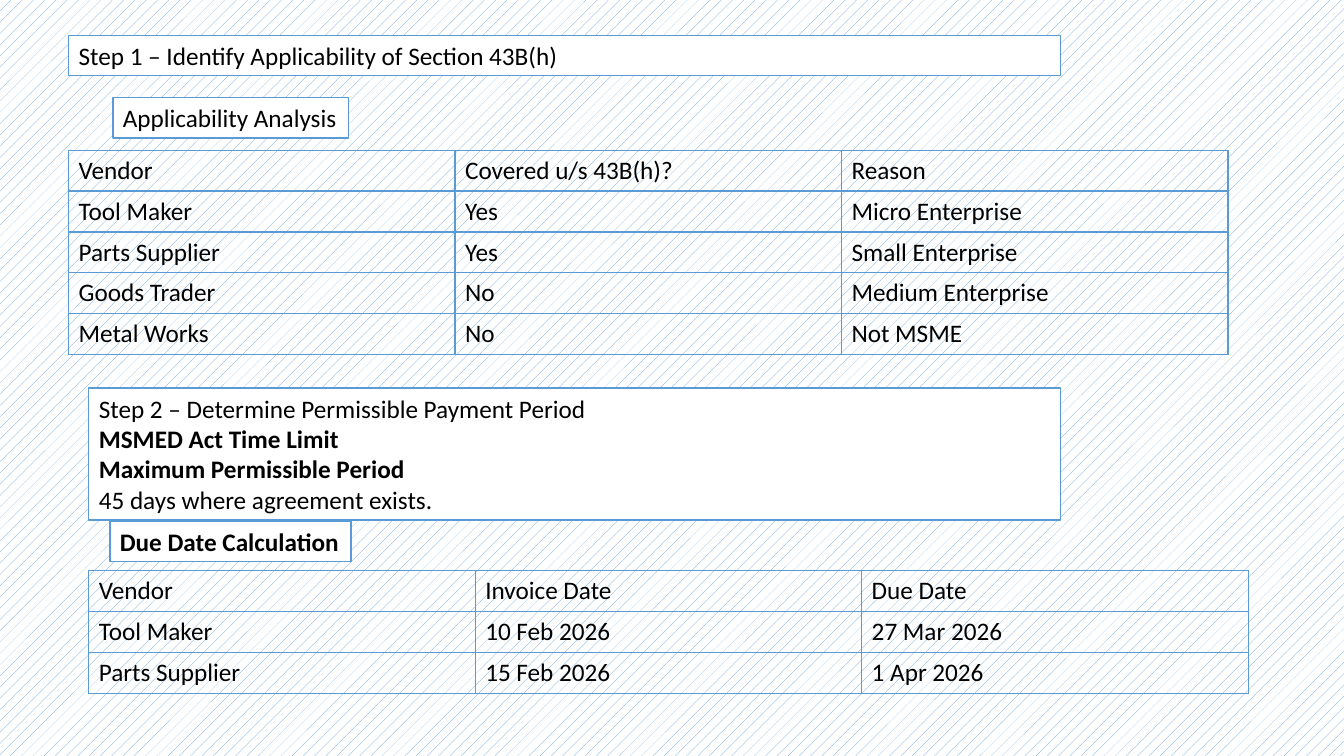
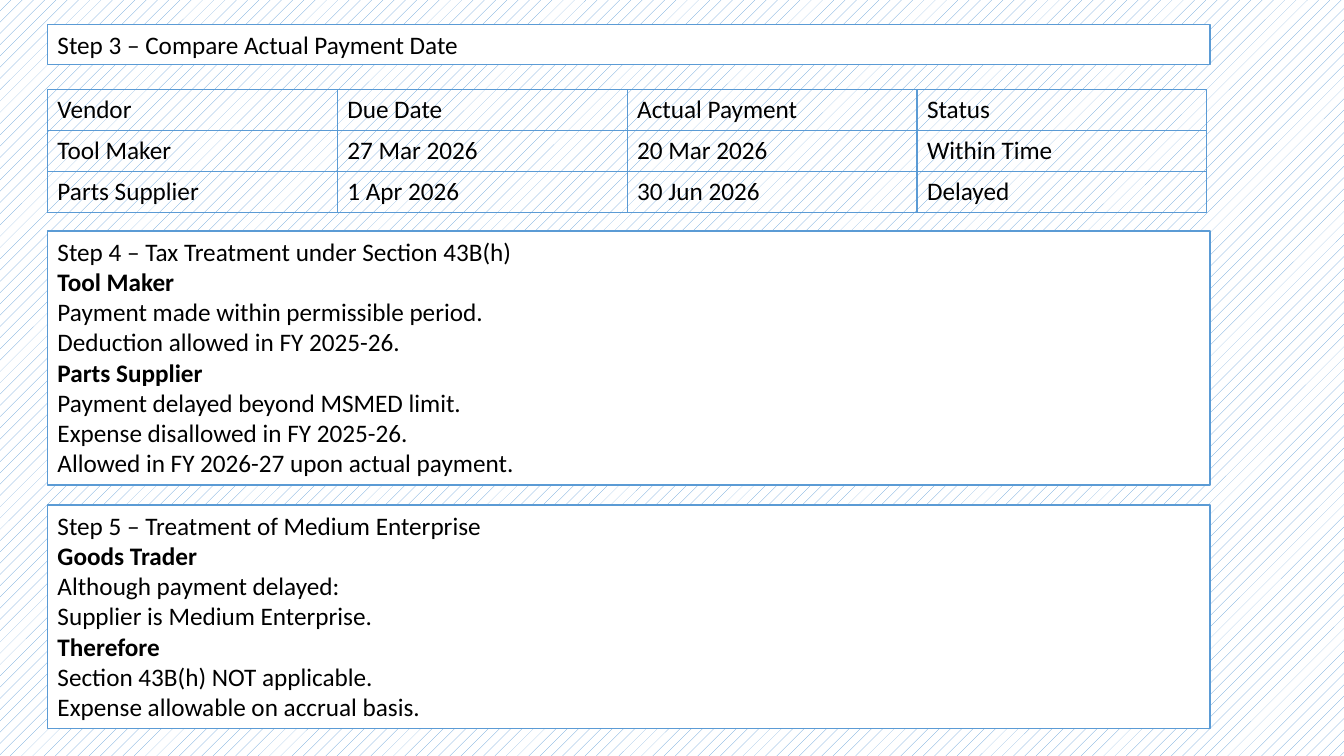
import dataclasses

import lxml.etree
import pptx
import pptx.dml.color
import pptx.enum.dml
import pptx.enum.text
import pptx.oxml.ns
import pptx.util

Inches = pptx.util.Inches

TOOLS = "Tool Maker"
PARTS = "Parts Supplier"
TRADER = "Goods Trader"
METALS = "Metal Works"


@dataclasses.dataclass(frozen=True)
class Theme:
    """Colours, type and line sizes shared by the deck."""

    accent: pptx.dml.color.RGBColor = pptx.dml.color.RGBColor(0x5B, 0x9B, 0xD5)
    paper: pptx.dml.color.RGBColor = pptx.dml.color.RGBColor(0xFF, 0xFF, 0xFF)
    ink: pptx.dml.color.RGBColor = pptx.dml.color.RGBColor(0, 0, 0)
    font: str = "Calibri"
    size: pptx.util.Pt = pptx.util.Pt(18)
    rule: pptx.util.Pt = pptx.util.Pt(1)
    row_height: pptx.util.Length = Inches(0.4)
    table_width: pptx.util.Length = Inches(11.5)


class Builder:
    """Hold the theme and the current page, and draw each kind of element."""

    def __init__(self, theme):
        self.theme = theme
        self.deck = pptx.Presentation()
        self.deck.slide_width = Inches(13.33)
        self.deck.slide_height = Inches(7.5)
        self.page = None

    def new_page(self, layout_name):
        layout = self.deck.slide_layouts.get_by_name(layout_name)
        self.page = self.deck.slides.add_slide(layout)
        fill = self.page.background.fill
        fill.patterned()
        fill.pattern = pptx.enum.dml.MSO_PATTERN.PERCENT_10
        fill.fore_color.rgb = self.theme.accent
        fill.back_color.rgb = self.theme.paper

    def style_text(self, frame, strong=()):
        for para in frame.paragraphs:
            para.alignment = pptx.enum.text.PP_ALIGN.LEFT
            para.space_before = pptx.util.Pt(0)
            for span in para.runs:
                span.font.name = self.theme.font
                span.font.size = self.theme.size
                span.font.color.rgb = self.theme.ink
                span.font.bold = span.text in strong

    def frame_box(self, box, left, top, width, height, wrap=True):
        box.left, box.top = Inches(left), Inches(top)
        box.width, box.height = Inches(width), Inches(height)
        box.fill.solid()
        box.fill.fore_color.rgb = self.theme.paper
        box.line.color.rgb = self.theme.accent
        box.line.width = self.theme.rule
        frame = box.text_frame
        frame.word_wrap = wrap
        frame.auto_size = pptx.enum.text.MSO_AUTO_SIZE.NONE
        frame.vertical_anchor = pptx.enum.text.MSO_ANCHOR.TOP

    def title(self, text, left, top, width):
        box = self.page.shapes.title
        self.frame_box(box, left, top, width, 0.4)
        box.text_frame.text = text
        self.style_text(box.text_frame)

    def steps(self, index, lines, strong, left, top, width, height):
        box = self.page.placeholders[index]
        self.frame_box(box, left, top, width, height)
        box.text_frame.text = "\n".join(lines)
        for para in box.text_frame.paragraphs:
            properties = para._p.get_or_add_pPr()
            properties.set("marL", "0")
            properties.set("indent", "0")
            lxml.etree.SubElement(properties, pptx.oxml.ns.qn("a:buNone"))
        self.style_text(box.text_frame, strong)

    def label(self, text, left, top, width, bold=False):
        box = self.page.shapes.add_textbox(0, 0, 0, 0)
        self.frame_box(box, left, top, width, 0.4, wrap=False)
        box.text_frame.text = text
        self.style_text(box.text_frame, (text,) if bold else ())

    def border_cell(self, cell):
        properties = cell._tc.get_or_add_tcPr()
        for position, side in enumerate(("lnL", "lnR", "lnT", "lnB")):
            edge = lxml.etree.Element(pptx.oxml.ns.qn(f"a:{side}"), w=str(self.theme.rule))
            paint = lxml.etree.SubElement(edge, pptx.oxml.ns.qn("a:solidFill"))
            lxml.etree.SubElement(
                paint, pptx.oxml.ns.qn("a:srgbClr"), val=str(self.theme.accent)
            )
            properties.insert(position, edge)

    def table(self, rows, left, top):
        height = self.theme.row_height * len(rows)
        grid = self.page.shapes.add_table(
            len(rows), len(rows[0]), Inches(left), Inches(top),
            self.theme.table_width, height,
        ).table
        grid.first_row = False
        grid.horz_banding = False
        for row_index, row in enumerate(rows):
            for column_index, text in enumerate(row):
                cell = grid.cell(row_index, column_index)
                cell.text_frame.text = text
                cell.vertical_anchor = pptx.enum.text.MSO_ANCHOR.MIDDLE
                cell.fill.background()
                self.border_cell(cell)
                self.style_text(cell.text_frame)


def build_applicability(builder):
    builder.new_page("Title and Content")
    builder.title("Step 1 – Identify Applicability of Section 43B(h)", 0.68, 0.35, 9.84)
    builder.label("Applicability Analysis", 1.12, 0.97, 2.34)
    builder.table(
        [
            ("Vendor", "Covered u/s 43B(h)?", "Reason"),
            (TOOLS, "Yes", "Micro Enterprise"),
            (PARTS, "Yes", "Small Enterprise"),
            (TRADER, "No", "Medium Enterprise"),
            (METALS, "No", "Not MSME"),
        ],
        0.68, 1.49,
    )
    builder.steps(
        1,
        [
            "Step 2 – Determine Permissible Payment Period",
            "MSMED Act Time Limit",
            "Maximum Permissible Period",
            "45 days where agreement exists.",
        ],
        ("MSMED Act Time Limit", "Maximum Permissible Period"),
        0.88, 3.85, 9.64, 1.31,
    )
    builder.label("Due Date Calculation", 1.09, 5.17, 2.39, bold=True)
    builder.table(
        [
            ("Vendor", "Invoice Date", "Due Date"),
            (TOOLS, "10 Feb 2026", "27 Mar 2026"),
            (PARTS, "15 Feb 2026", "1 Apr 2026"),
        ],
        0.88, 5.66,
    )


def build_treatment(builder):
    left, width = 0.47, 11.53
    builder.new_page("Two Content")
    builder.title("Step 3 – Compare Actual Payment Date", left, 0.24, width)
    builder.table(
        [
            ("Vendor", "Due Date", "Actual Payment", "Status"),
            (TOOLS, "27 Mar 2026", "20 Mar 2026", "Within Time"),
            (PARTS, "1 Apr 2026", "30 Jun 2026", "Delayed"),
        ],
        left, 0.89,
    )
    builder.steps(
        1,
        [
            "Step 4 – Tax Treatment under Section 43B(h)",
            TOOLS,
            "Payment made within permissible period.",
            "Deduction allowed in FY 2025-26.",
            PARTS,
            "Payment delayed beyond MSMED limit.",
            "Expense disallowed in FY 2025-26.",
            "Allowed in FY 2026-27 upon actual payment.",
        ],
        (TOOLS, PARTS),
        left, 2.29, width, 2.52,
    )
    builder.steps(
        2,
        [
            "Step 5 – Treatment of Medium Enterprise",
            TRADER,
            "Although payment delayed:",
            "Supplier is Medium Enterprise.",
            "Therefore",
            "Section 43B(h) NOT applicable.",
            "Expense allowable on accrual basis.",
        ],
        (TRADER, "Therefore"),
        left, 5.01, width, 2.22,
    )


def main():
    builder = Builder(Theme())
    build_applicability(builder)
    build_treatment(builder)
    builder.deck.save("out.pptx")


if __name__ == "__main__":
    main()
